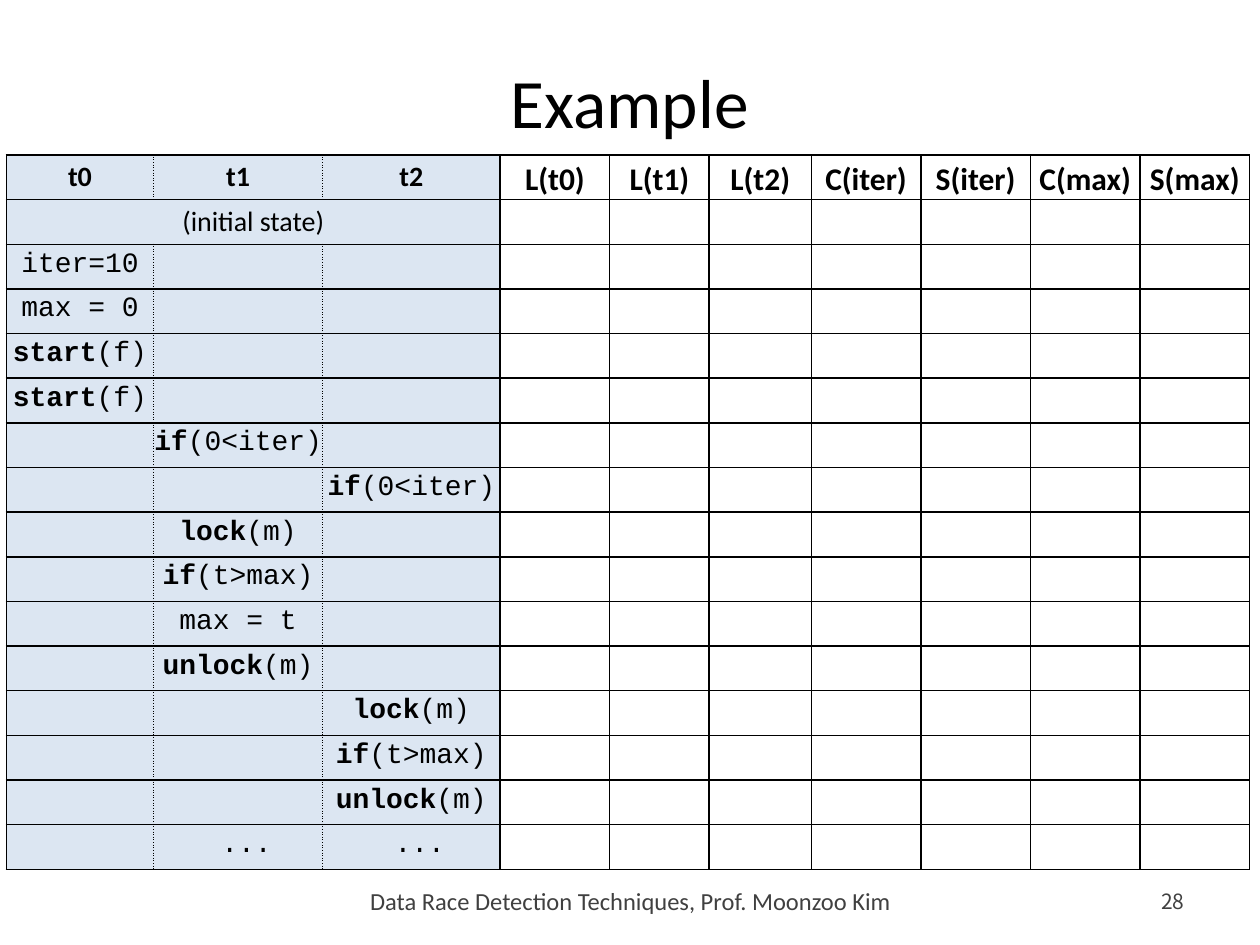
"""Build the data race example slide with its thread trace table."""
from lxml import etree
from pptx import Presentation
from pptx import util as u
from pptx.dml.color import RGBColor
from pptx.enum import text
from pptx.oxml.ns import qn

HUES = {"ink": "000000", "gray": "404040", "blue": "DCE6F2", "white": "FFFFFF"}
SANS, CODE, PAGE = "Calibri", "Courier New", "Noto Sans CJK KR"
MID, RIGHT = text.PP_ALIGN.CENTER, text.PP_ALIGN.RIGHT
WIDTHS = [1.17, 1.34, 1.41, 0.87, 0.79, 0.81] + [0.87] * 4
HEIGHT = 5.67
HEADS = ["t0", "t1", "t2", "L(t0)", "L(t1)", "L(t2)",
         "C(iter)", "S(iter)", "C(max)", "S(max)"]
THREADS = 3
STEPS = [
    {0: "iter=10"}, {0: "max = 0"}, {0: "start(f)"}, {0: "start(f)"},
    {1: "if(0<iter)"}, {2: "if(0<iter)"},
    {1: "lock(m)"}, {1: "if(t>max)"}, {1: "max = t"}, {1: "unlock(m)"},
    {2: "lock(m)"}, {2: "if(t>max)"}, {2: "unlock(m)"},
    {1: " ...", 2: " ..."},
]


class Deck:
    def __init__(self):
        self.prs = Presentation()
        self.prs.slide_width, self.prs.slide_height = u.Inches(10), u.Inches(7.5)
        self.slide = self.prs.slides.add_slide(self.prs.slide_layouts[6])

    def run(self, para, words, size, font=SANS, hue="ink", bold=False):
        run = para.add_run()
        run.text = words
        run.font.size, run.font.name, run.font.bold = u.Pt(size), font, bold
        run.font.color.rgb = RGBColor.from_string(HUES[hue])

    def label(self, box, words, size, align=MID, **style):
        frame = self.slide.shapes.add_textbox(*map(u.Inches, box)).text_frame
        frame.word_wrap = True
        frame.vertical_anchor = text.MSO_ANCHOR.MIDDLE
        para = frame.paragraphs[0]
        para.alignment = align
        self.run(para, words, size, **style)

    def grid(self, left, top, rows):
        shape = self.slide.shapes.add_table(
            rows, len(WIDTHS), u.Inches(left), u.Inches(top),
            u.Inches(sum(WIDTHS)), u.Inches(HEIGHT))
        table = shape.table
        table.first_row = table.horz_banding = False
        for col, width in zip(table.columns, WIDTHS):
            col.width = u.Inches(width)
        for row in table.rows:
            row.height = u.Inches(HEIGHT / rows)
        return table

    def edge(self, cell, side, dash):
        line = etree.SubElement(cell._tc.get_or_add_tcPr(), qn(f"a:ln{side}"),
                                w=str(u.Pt(1)))
        fill = etree.SubElement(line, qn("a:solidFill"))
        etree.SubElement(fill, qn("a:srgbClr"), val=HUES["ink"])
        etree.SubElement(line, qn("a:prstDash"), val=dash)

    def cell(self, cell, hue, dots="", inset=0):
        cell.margin_left = cell.margin_right = u.Inches(inset)
        cell.margin_top = cell.margin_bottom = 0
        for side in "LRTB":
            self.edge(cell, side, "sysDot" if side in dots else "solid")
        cell.fill.solid()
        cell.fill.fore_color.rgb = RGBColor.from_string(HUES[hue])
        para = cell.text_frame.paragraphs[0]
        para.alignment, para.line_spacing = MID, 1.15
        return para

    def code(self, para, words):
        verb, mark, rest = words.partition("(")
        self.run(para, verb, 16, CODE, bold=bool(mark))
        if mark:
            self.run(para, mark + rest, 16, CODE)

    def trace(self, left, top):
        table = self.grid(left, top, len(STEPS) + 2)
        table.cell(1, 0).merge(table.cell(1, THREADS - 1))
        dots = ["R", "LR", "L"]
        for r in range(len(STEPS) + 2):
            for c, head in enumerate(HEADS):
                shade = c < THREADS
                para = self.cell(table.cell(r, c), "blue" if shade else "white",
                                 dots[c] if shade and r != 1 else "",
                                 0.06 if r < 2 else 0)
                if r == 0:
                    self.run(para, head, 16 if shade else 18, bold=True)
                elif r == 1 and c == 0:
                    self.run(para, "(initial state)", 16)
                elif r > 1 and c in STEPS[r - 2]:
                    self.code(para, STEPS[r - 2][c])


def main():
    deck = Deck()
    deck.label((0.5, 0.45, 9, 0.7), "Example", 39.6)
    deck.label((1.61, 6.95, 6.79, 0.4),
               "Data Race Detection Techniques, Prof. Moonzoo Kim", 14, hue="gray")
    deck.trace(0.05, 1.23)
    deck.label((8.94, 6.95, 0.56, 0.4), "28", 12, RIGHT, font=PAGE, hue="gray")
    deck.prs.save("out.pptx")


if __name__ == "__main__":
    main()
